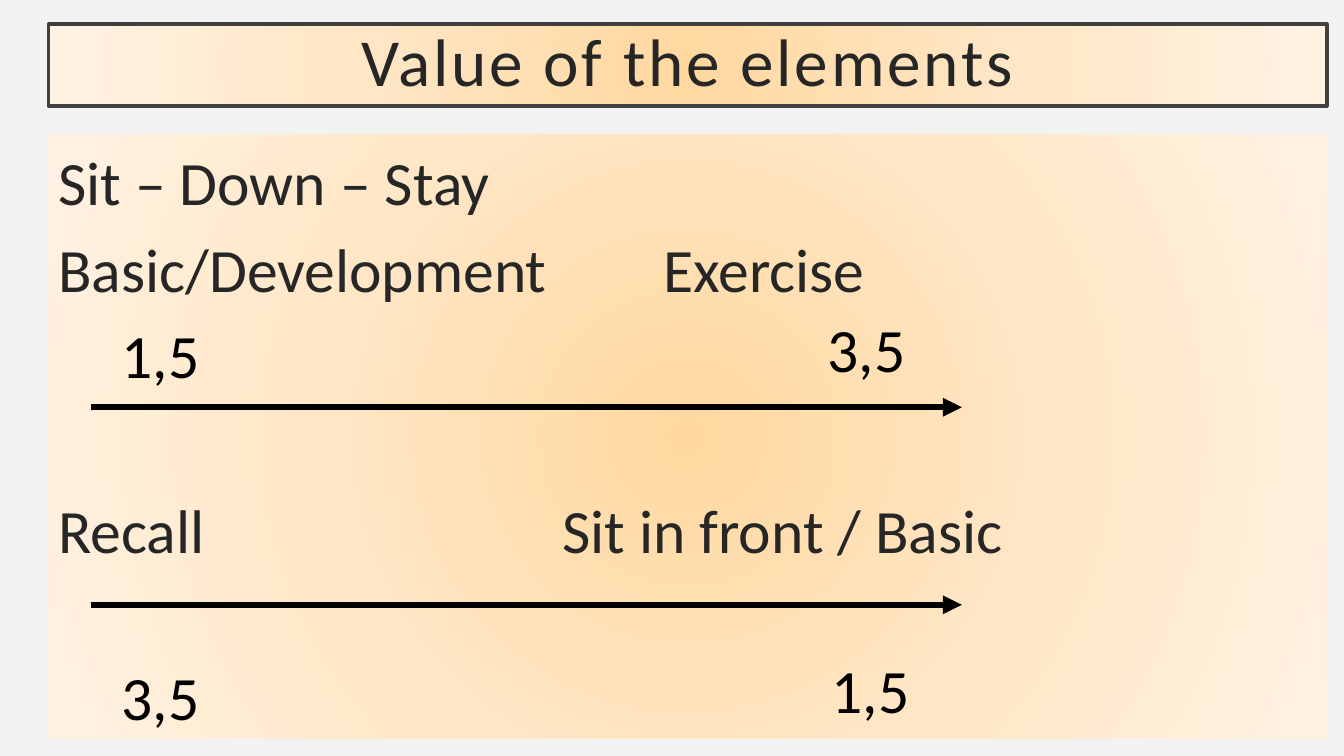
from lxml.etree import SubElement
from pptx import Presentation
from pptx.dml.color import RGBColor
from pptx.enum.shapes import MSO_CONNECTOR
from pptx.enum.text import MSO_ANCHOR, MSO_AUTO_SIZE, PP_ALIGN
from pptx.oxml.ns import qn
from pptx.util import Inches, Pt

GRADIENT = {0: "FFD8A0", 50: "FFE6C5", 100: "FFF2E3"}
PANEL_LEFT, PANEL_WIDTH = 0.48, 12.68
ARROW_START, ARROW_END = 0.9, 9.54
TEXT_COLOR, BLACK = "262626", "000000"


def color(value):
    return RGBColor.from_string(value)


def apply_format(target, values):
    for name, value in values.items():
        setattr(target, name, value)


def format_font(font, size, value):
    apply_format(font, {"name": "Calibri", "size": Pt(size), "bold": False})
    font.color.rgb = color(value)


def place(shape, left, top, width, height):
    apply_format(shape, {
        "left": Inches(left), "top": Inches(top),
        "width": Inches(width), "height": Inches(height),
    })


def fill_radial(shape):
    shape.fill.gradient()
    gradient = shape.element.spPr.find(qn("a:gradFill"))
    gradient.clear()
    gradient.set("rotWithShape", "1")
    stops = SubElement(gradient, qn("a:gsLst"))
    for position, value in GRADIENT.items():
        stop = SubElement(stops, qn("a:gs"), pos=str(position * 1000))
        SubElement(stop, qn("a:srgbClr"), val=value)
    circle = SubElement(gradient, qn("a:path"))
    circle.set("path", "circle")
    SubElement(circle, qn("a:fillToRect"), l="50000", t="50000", r="50000", b="50000")


def format_title(shape, text):
    place(shape, PANEL_LEFT, 0.24, PANEL_WIDTH, 0.81)
    fill_radial(shape)
    shape.line.color.rgb = color("404040")
    shape.line.width = Pt(2.5)
    frame = shape.text_frame
    frame.text = text
    margins = ("margin_left", "margin_top", "margin_right", "margin_bottom")
    apply_format(frame, dict.fromkeys(margins, Inches(0.2)))
    apply_format(frame, {
        "auto_size": MSO_AUTO_SIZE.NONE, "word_wrap": True,
        "vertical_anchor": MSO_ANCHOR.MIDDLE,
    })
    paragraph = frame.paragraphs[0]
    apply_format(paragraph, {"alignment": PP_ALIGN.CENTER, "line_spacing": 0.9})
    run = paragraph.runs[0]
    format_font(run.font, 48, TEXT_COLOR)
    run.font._element.set("spc", "200")


def add_tab_stop(paragraph, position):
    properties = paragraph._p.get_or_add_pPr()
    tabs = SubElement(properties, qn("a:tabLst"))
    SubElement(tabs, qn("a:tab"), pos=str(Inches(position)), algn="l")


def add_text(slide, box, lines):
    shape = slide.shapes.add_textbox(*map(Inches, box))
    frame = shape.text_frame
    frame.word_wrap = True
    for index, (text, space_before, tab_stop, value) in enumerate(lines):
        paragraph = frame.add_paragraph() if index else frame.paragraphs[0]
        if space_before:
            paragraph.space_before = Pt(space_before)
        if tab_stop:
            add_tab_stop(paragraph, tab_stop)
        run = paragraph.add_run()
        run.text = text
        format_font(run.font, 44, value)
    return shape


def add_arrow(slide, top):
    arrow = slide.shapes.add_connector(
        MSO_CONNECTOR.STRAIGHT,
        Inches(ARROW_START), Inches(top), Inches(ARROW_END), Inches(top))
    arrow.line.color.rgb = color(BLACK)
    arrow.line.width = Pt(4.5)
    properties = arrow._element.spPr
    SubElement(properties.find(qn("a:ln")), qn("a:tailEnd"), type="triangle")
    SubElement(properties, qn("a:effectLst"))


def main():
    presentation = Presentation()
    presentation.slide_width = Inches(13.33)
    presentation.slide_height = Inches(7.5)
    slide = presentation.slides.add_slide(presentation.slide_layouts[5])
    slide.background.fill.solid()
    slide.background.fill.fore_color.rgb = color("F2F2F2")

    format_title(slide.shapes.title, "Value of the elements")
    panel = add_text(slide, (PANEL_LEFT, 1.33, PANEL_WIDTH, 6), [
        ("Sit – Down – Stay", 0, None, TEXT_COLOR),
        ("Basic/Development\tExercise", 9, 6, TEXT_COLOR),
        ("Recall\tSit in front / Basic", 134, 5, TEXT_COLOR),
    ])
    panel.text_frame.margin_top = Inches(0.1)
    fill_radial(panel)

    for top in (4.04, 6):
        add_arrow(slide, top)
    for text, left, top in (("1,5", 1.11, 3.09), ("3,5", 8.11, 3.04),
                            ("3,5", 1.11, 6.49), ("1,5", 8.15, 6.42)):
        add_text(slide, (left, top, 1.12, 0.84), [(text, 0, None, BLACK)])

    presentation.save("out.pptx")


if __name__ == "__main__":
    main()
